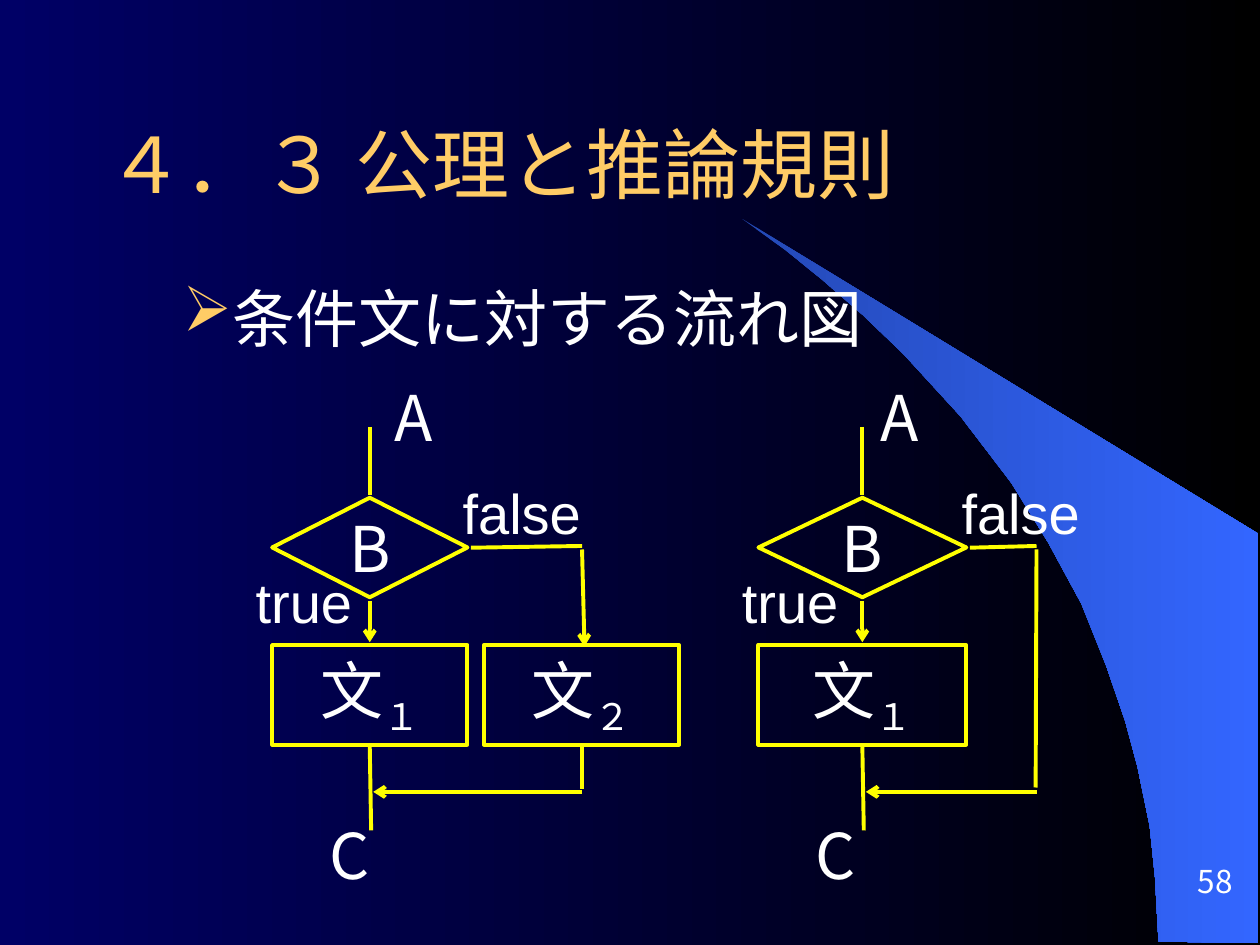
from lxml import etree
from pptx import Presentation
from pptx.dml.color import RGBColor
from pptx.enum.shapes import MSO_CONNECTOR, MSO_SHAPE as SHAPE
from pptx.enum.text import MSO_ANCHOR as ANCHOR, PP_ALIGN as ALIGN
from pptx.oxml.ns import qn
from pptx.util import Pt

CJK = "Noto Sans CJK JP"
WHITE, GOLD, YELLOW = "FFFFFF", "FFCC66", "FFFF00"


def rgb(value):
    return RGBColor.from_string(value)


def write(s, text, size=36, font=CJK, color=WHITE, align=ALIGN.LEFT,
          anchor=ANCHOR.TOP, wrap=True):
    """Fill a shape with one formatted paragraph and return the paragraph."""
    tf = s.text_frame
    tf.word_wrap = wrap
    tf.vertical_anchor = anchor
    p = tf.paragraphs[0]
    p.text = text
    p.alignment = align
    p.font.size = Pt(size)
    p.font.name = font
    p.font.color.rgb = rgb(color)
    ea = etree.SubElement(p.font._element, qn("a:ea"))
    ea.set("typeface", CJK)
    return p


prs = Presentation()
prs.slide_width, prs.slide_height = Pt(720), Pt(540)
slide = prs.slides.add_slide(prs.slide_layouts[5])
shapes = slide.shapes

# Background and crescent
crescent_points = [
    (662.4, 538.5), (719.3, 539.3), (719.3, 304.6), (424, 124.6),
    (449.3, 143.3), (470.2, 159.8), (493.2, 180), (515.5, 201.6),
    (548.6, 237.6), (578.2, 276.5), (599, 310.3), (617.8, 344.9),
    (632.2, 380.2), (643, 411.8), (650.2, 438.5), (657.4, 472.3),
    (660.2, 501.1)]
builder = shapes.build_freeform(*crescent_points[0], scale=Pt(1))
builder.add_line_segments(crescent_points[1:], close=True)
crescent = builder.convert_to_shape()
crescent.shadow.inherit = False
crescent.line.fill.background()
for fill, colors in ((slide.background.fill, ("000066", "000000")),
                     (crescent.fill, ("2449B6", "3366FF"))):
    fill.gradient()
    fill.gradient_angle = 0
    for stop, color in zip(fill.gradient_stops, colors):
        stop.color.rgb = rgb(color)

# Title, bullet and slide number
title = shapes.title
title.left, title.top, title.width, title.height = Pt(54), Pt(48), Pt(636.5), Pt(90)
write(title, "４．３ 公理と推論規則", 44, "Arial", GOLD, anchor=ANCHOR.MIDDLE)

body = shapes.add_textbox(Pt(54), Pt(156), Pt(612), Pt(324))
body.text_frame.margin_left = body.text_frame.margin_right = Pt(14.4)
pPr = write(body, "条件文に対する流れ図")._p.get_or_add_pPr()
pPr.set("marL", str(Pt(58.5)))
pPr.set("indent", str(Pt(-22.5)))
bullet_color = etree.Element(qn("a:buClr"))
etree.SubElement(bullet_color, qn("a:srgbClr")).set("val", GOLD)
bullet = etree.Element(qn("a:buChar"))
bullet.set("char", "➢")
pPr.insert(0, bullet_color)
pPr.insert(1, bullet)

number = shapes.add_textbox(Pt(638), Pt(484), Pt(73.5), Pt(30))
number.text_frame.margin_top = number.text_frame.margin_bottom = 0
write(number, "58", 18, align=ALIGN.RIGHT, anchor=ANCHOR.BOTTOM, wrap=False)

# Flowcharts: if-else on the left, if without else on the right
BOX_H, TEST_Y, BOX_Y = 56.9, 284.4, 368.6
TEST_MID, BOX_END, JOIN_Y = 313, 427, 452.5
boxes, lines, labels = [], [], []
for x, w, branch_x in ((155.5, 111.6, 332.6), (433.4, 118.8, 592.3)):
    mid = x + w / 2
    boxes += [(SHAPE.FLOWCHART_DECISION, x, TEST_Y, w, "B", ""),
              (SHAPE.RECTANGLE, x, BOX_Y, w, "文", "１")]
    lines += [(mid, 244, mid, 283, False),
              (mid, 343.5, mid, 367, True),
              (mid, BOX_END, mid + 0.8, 474.5, False),
              (x + w + 2, TEST_MID, branch_x, TEST_MID - 1, False),
              (branch_x, JOIN_Y, mid + 2, JOIN_Y, True)]
    labels += [("A", x + 62.6, 213, 57, 36, CJK),
               ("C", x + 25.5, 463, 57, 36, CJK),
               ("true", x - 16.5, 321, 108, 32, "Arial"),
               ("false", x + w - 9.8, 270, 91, 32, "Arial")]
boxes.append((SHAPE.RECTANGLE, 276.5, BOX_Y, 111.6, "文", "２"))
lines += [(332.6, 314, 334, 369.4, True),
          (332.6, BOX_END, 332.6, 451, False),
          (592.3, 314, 591.8, 450, False)]

for kind, x, y, w, text, subscript in boxes:
    s = shapes.add_shape(kind, Pt(x), Pt(y), Pt(w), Pt(BOX_H))
    s.shadow.inherit = False
    s.fill.background()
    s.line.color.rgb = rgb(YELLOW)
    s.line.width = Pt(2.25)
    p = write(s, text, align=ALIGN.CENTER, anchor=ANCHOR.MIDDLE, wrap=False)
    if subscript:
        r = p.add_run()
        r.text = subscript
        r._r.get_or_add_rPr().set("baseline", "-25000")

for x1, y1, x2, y2, arrow in lines:
    c = shapes.add_connector(MSO_CONNECTOR.STRAIGHT, Pt(x1), Pt(y1), Pt(x2), Pt(y2))
    c.line.color.rgb = rgb(YELLOW)
    c.line.width = Pt(2.25)
    if arrow:
        etree.SubElement(c.line._get_or_add_ln(), qn("a:tailEnd")).set("type", "arrow")
    etree.SubElement(c._element.spPr, qn("a:effectLst"))

for text, x, y, w, size, font in labels:
    s = shapes.add_textbox(Pt(x), Pt(y), Pt(w), Pt(50))
    write(s, text, size, font)

prs.save("out.pptx")
